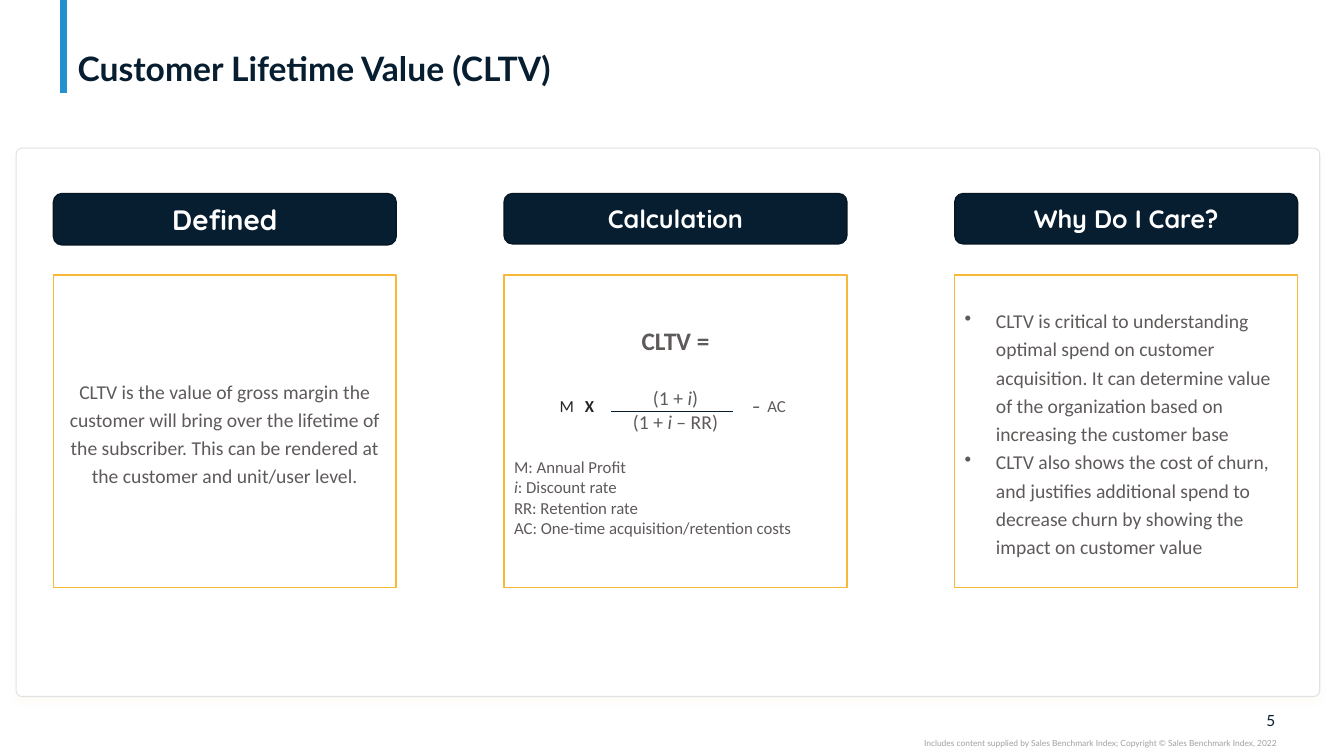
from dataclasses import dataclass

import pptx
import pptx.dml.color
import pptx.enum.shapes
import pptx.enum.text
import pptx.oxml
import pptx.oxml.ns
import pptx.util
from lxml import etree

Inches = pptx.util.Inches
Pt = pptx.util.Pt
ALIGN = pptx.enum.text.PP_ALIGN
ANCHOR = pptx.enum.text.MSO_ANCHOR
SHAPE = pptx.enum.shapes.MSO_SHAPE
NAVY, GREY, AMBER, WHITE = "071E31", "5F5A5A", "F8B737", "FFFFFF"


@dataclass
class Span:
    text: str
    italic: bool = False
    bold: bool = False


@dataclass
class Line:
    spans: list[Span]
    size: float = 14
    align: ALIGN = ALIGN.CENTER
    before: float = 0
    spacing: float = 1.0
    bullet: bool = False
    tab: float = 0
    font: str = "Calibri"
    color: str = GREY


@dataclass
class Column:
    heading: str
    heading_size: float
    heading_height: float
    lines: list[Line]


@dataclass
class Label:
    left: float
    top: float
    width: float
    height: float
    line: Line
    inset: float = 0
    anchor: ANCHOR = ANCHOR.TOP


def rgb(value: str) -> pptx.dml.color.RGBColor:
    return pptx.dml.color.RGBColor.from_string(value)


def write_lines(frame, lines: list[Line]) -> None:
    for number, line in enumerate(lines):
        paragraph = frame.add_paragraph() if number else frame.paragraphs[0]
        paragraph.alignment = line.align
        paragraph.line_spacing = line.spacing
        if line.before:
            paragraph.space_before = Pt(line.before)
        properties = paragraph._p.get_or_add_pPr()
        if line.bullet:
            properties.set("marL", str(Inches(0.31)))
            properties.set("indent", str(Inches(-0.31)))
            etree.SubElement(properties, pptx.oxml.ns.qn("a:buChar")).set("char", "•")
        if line.tab:
            tabs = etree.SubElement(properties, pptx.oxml.ns.qn("a:tabLst"))
            stop = etree.SubElement(tabs, pptx.oxml.ns.qn("a:tab"))
            stop.set("pos", str(Inches(line.tab)))
            stop.set("algn", "l")
        for span in line.spans:
            run = paragraph.add_run()
            run.text = span.text
            run.font.name = line.font
            run.font.size = Pt(line.size)
            run.font.bold = span.bold
            run.font.italic = span.italic
            run.font.color.rgb = rgb(line.color)


def add_panel(slide, kind: SHAPE, box: tuple[float, float, float, float],
              fill: str, outline: str, weight: float):
    panel = slide.shapes.add_shape(kind, *map(Inches, box))
    panel.shadow.inherit = False
    panel.fill.solid()
    panel.fill.fore_color.rgb = rgb(fill)
    panel.line.color.rgb = rgb(outline)
    panel.line.width = Pt(weight)
    panel.text_frame.word_wrap = True
    panel.text_frame.vertical_anchor = ANCHOR.MIDDLE
    return panel


def add_rule(slide, start: tuple[float, float], end: tuple[float, float],
             color: str, weight: float) -> None:
    rule = slide.shapes.add_connector(
        pptx.enum.shapes.MSO_CONNECTOR.STRAIGHT, *map(Inches, start + end))
    rule.line.color.rgb = rgb(color)
    rule.line.width = Pt(weight)
    etree.SubElement(rule._element.spPr, pptx.oxml.ns.qn("a:effectLst"))


def add_label(slide, label: Label) -> None:
    box = slide.shapes.add_textbox(
        *map(Inches, (label.left, label.top, label.width, label.height)))
    frame = box.text_frame
    frame.word_wrap = True
    frame.vertical_anchor = label.anchor
    frame.margin_left = Inches(label.inset)
    frame.margin_right = frame.margin_bottom = 0
    frame.margin_top = Inches(0.05 if label.inset else 0)
    write_lines(frame, [label.line])


def add_title(slide) -> None:
    title = slide.shapes.title
    title.left, title.top, title.width, title.height = map(Inches, (0.67, 0.04, 11.99, 0.84))
    frame = title.text_frame
    frame.auto_size = pptx.enum.text.MSO_AUTO_SIZE.NONE
    frame.word_wrap = True
    frame.vertical_anchor = ANCHOR.BOTTOM
    frame.margin_left = frame.margin_right = Inches(0.1)
    frame.margin_top = frame.margin_bottom = 0
    write_lines(frame, [Line([Span("Customer Lifetime Value (CLTV)", bold=True)], 24,
                             ALIGN.LEFT, spacing=0.9, font="Lato", color=NAVY)])


def add_card(slide) -> None:
    card = add_panel(slide, SHAPE.ROUNDED_RECTANGLE, (0.16, 1.47, 12.93, 5.44),
                     WHITE, "E0E3E6", 0.75)
    card.adjustments[0] = 0.011
    effects = card._element.spPr.find(pptx.oxml.ns.qn("a:effectLst"))
    effects.append(pptx.oxml.parse_xml(
        f'<a:outerShdw {pptx.oxml.ns.nsdecls("a")} blurRad="{Pt(6)}" dist="{Pt(4)}" '
        f'dir="5400000" algn="t" rotWithShape="0"><a:srgbClr val="{AMBER}">'
        '<a:alpha val="4000"/></a:srgbClr></a:outerShdw>'))


def add_column(slide, left: float, column: Column) -> None:
    heading = add_panel(slide, SHAPE.ROUNDED_RECTANGLE,
                        (left, 1.92, 3.4, column.heading_height), NAVY, "051624", 1)
    write_lines(heading.text_frame, [Line([Span(column.heading, bold=True)],
                                          column.heading_size, font="Quicksand", color=WHITE)])
    body = add_panel(slide, SHAPE.RECTANGLE, (left, 2.73, 3.4, 3.1), WHITE, AMBER, 1)
    write_lines(body.text_frame, column.lines)


DEFINITION = [Line([Span(
    "CLTV is the value of gross margin the customer will bring over the lifetime of the "
    "subscriber. This can be rendered at the customer and unit/user level.")], spacing=1.2)]
FORMULA = [
    Line([Span("CLTV =", bold=True)], 18),
    Line([Span("(1 + "), Span("i", italic=True), Span(")")], before=22),
    Line([Span("(1 + "), Span("i", italic=True), Span(" – RR)")]),
    Line([Span("M: Annual Profit")], 12, ALIGN.LEFT, before=17),
    Line([Span("i", italic=True), Span(": Discount rate")], 12, ALIGN.LEFT),
    Line([Span("RR: Retention rate")], 12, ALIGN.LEFT),
    Line([Span("AC: One-time acquisition/retention costs")], 12, ALIGN.LEFT),
]
REASONS = [Line([Span(reason)], align=ALIGN.LEFT, spacing=1.2, bullet=True) for reason in (
    "CLTV is critical to understanding optimal spend on customer acquisition. It can "
    "determine value of the organization based on increasing the customer base",
    "CLTV also shows the cost of churn, and justifies additional spend to decrease churn "
    "by showing the impact on customer value")]
COLUMNS = [Column("Defined", 20, 0.51, DEFINITION), Column("Calculation", 18, 0.5, FORMULA),
           Column("Why Do I Care?", 18, 0.5, REASONS)]
LABELS = [
    Label(12.32, 7.05, 0.33, 0.19, Line([Span("5")], 11, ALIGN.RIGHT, font="Lato", color=NAVY),
          anchor=ANCHOR.MIDDLE),
    Label(7.5, 7.32, 5.16, 0.1, Line([Span(
        "Includes content supplied by Sales Benchmark Index; Copyright © Sales Benchmark "
        "Index, 2022")], 6, ALIGN.RIGHT, font="Lato", color="A0A0A0")),
    Label(5.39, 3.88, 0.67, 0.3, Line([Span("M\t"), Span("X", bold=True)], 12, ALIGN.LEFT,
                                      tab=0.25, color="272525"), inset=0.16),
    Label(7.27, 3.88, 0.7, 0.3, Line([Span("–\t", bold=True), Span("AC")], 12, ALIGN.LEFT,
                                     tab=0.15), inset=0.19),
]


def main() -> None:
    """Build the customer lifetime value slide."""
    deck = pptx.Presentation()
    deck.slide_width, deck.slide_height = Inches(13.33), Inches(7.5)
    slide = deck.slides.add_slide(deck.slide_layouts[5])
    add_rule(slide, (0.63, 0), (0.63, 0.92), "2391CF", 5)
    add_title(slide)
    add_card(slide)
    for number, column in enumerate(COLUMNS):
        add_column(slide, 0.53 + 4.47 * number, column)
    add_rule(slide, (6.06, 4.08), (7.27, 4.08), NAVY, 0.25)
    for label in LABELS:
        add_label(slide, label)
    deck.save("out.pptx")


if __name__ == "__main__":
    main()
